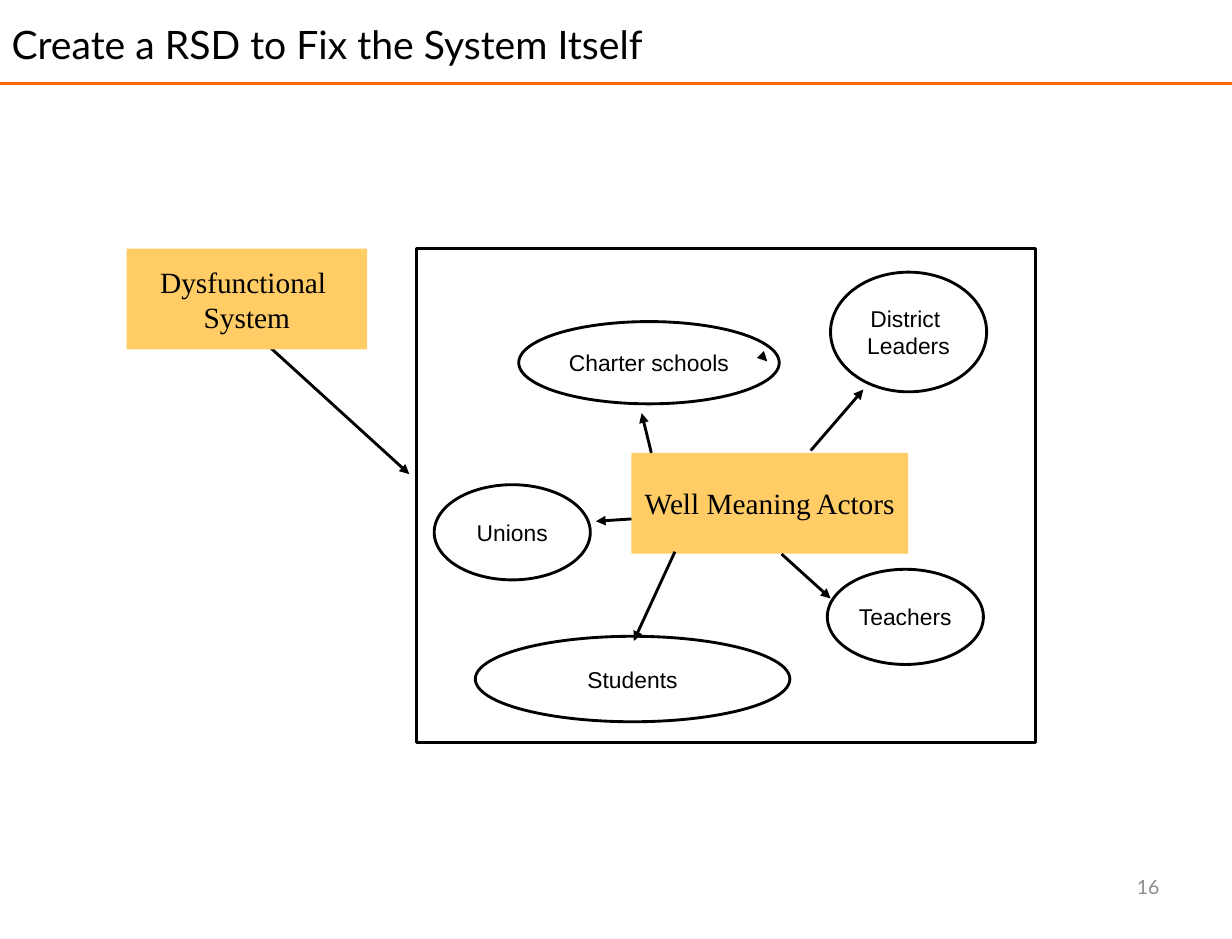
from dataclasses import dataclass

import pptx
import pptx.util
from lxml import etree
from pptx.dml.color import RGBColor
from pptx.enum.shapes import MSO_CONNECTOR, MSO_SHAPE
from pptx.enum.text import MSO_ANCHOR, PP_ALIGN
from pptx.oxml.ns import qn
from pptx.util import Cm

BLACK = RGBColor(0x00, 0x00, 0x00)
ORANGE = RGBColor(0xFF, 0x66, 0x00)
AMBER = RGBColor(0xFF, 0xCC, 0x66)
GREY = RGBColor(0x8C, 0x8C, 0x8C)
LINE_WIDTH = pptx.util.Pt(1.75)
HANGING = Cm(1.22)


@dataclass(frozen=True)
class Box:
    left: float
    top: float
    width: float
    height: float

    def lengths(self) -> tuple:
        return Cm(self.left), Cm(self.top), Cm(self.width), Cm(self.height)


@dataclass(frozen=True)
class TextStyle:
    font: str
    size: int
    color: RGBColor = BLACK


@dataclass(frozen=True)
class Node:
    box: Box
    lines: tuple[str, ...]


@dataclass(frozen=True)
class Arrow:
    x1: float
    y1: float
    x2: float
    y2: float


TITLE = TextStyle("Lato", 24)
PAGE_NUMBER = TextStyle("Lato", 12, GREY)
ACTOR = TextStyle("Arial", 14)
CONCEPT = TextStyle("Times New Roman", 18)

SYSTEM_FRAME = Node(Box(9.02, 5.38, 13.39, 10.69), ())
ACTORS = (
    Node(Box(9.4, 10.49, 3.38, 2.06), ("Unions",)),
    Node(Box(11.23, 6.96, 5.64, 1.78), ("Charter schools",)),
    Node(Box(17.98, 5.89, 3.38, 2.59), ("District ", "Leaders")),
    Node(Box(17.91, 12.32, 3.38, 2.06), ("Teachers",)),
    Node(Box(10.29, 13.77, 6.81, 1.85), ("Students",)),
)
WELL_MEANING = Node(Box(13.67, 9.8, 5.99, 2.18), ("Well Meaning Actors",))
DYSFUNCTIONAL = Node(Box(2.74, 5.38, 5.21, 2.18), ("Dysfunctional ", "System"))
ARROWS = (
    Arrow(16.59, 7.8, 16.61, 7.82),  # only the head shows, inside Charter schools
    Arrow(13.67, 11.23, 12.9, 11.28),
    Arrow(14.61, 11.94, 13.72, 13.87),
    Arrow(16.92, 11.99, 17.98, 12.95),
    Arrow(17.55, 9.75, 18.69, 8.43),
    Arrow(14.1, 9.8, 13.89, 8.94),
    Arrow(5.74, 7.42, 8.86, 10.26),
)


def add_run(paragraph, text: str, style: TextStyle) -> None:
    run = paragraph.add_run()
    run.text = text
    run.font.name = style.font
    run.font.size = pptx.util.Pt(style.size)
    run.font.color.rgb = style.color


def add_label(slide, box: Box, text: str, style: TextStyle,
              align: PP_ALIGN, anchor: MSO_ANCHOR) -> None:
    frame = slide.shapes.add_textbox(*box.lengths()).text_frame
    frame.word_wrap = True
    frame.vertical_anchor = anchor
    paragraph = frame.paragraphs[0]
    paragraph.alignment = align
    add_run(paragraph, text, style)


def add_node(slide, node: Node, preset: MSO_SHAPE, style: TextStyle,
             fill: RGBColor | None = None) -> None:
    """Draw a filled box without outline, or an outlined one without fill."""
    shape = slide.shapes.add_shape(preset, *node.box.lengths())
    shape.shadow.inherit = False
    if fill is None:
        shape.fill.background()
        shape.line.color.rgb = BLACK
        shape.line.width = LINE_WIDTH
    else:
        shape.fill.solid()
        shape.fill.fore_color.rgb = fill
        shape.line.fill.background()
    frame = shape.text_frame
    frame.word_wrap = False
    frame.vertical_anchor = MSO_ANCHOR.MIDDLE
    for index, line in enumerate(node.lines):
        paragraph = frame.add_paragraph() if index else frame.paragraphs[0]
        paragraph.alignment = PP_ALIGN.CENTER
        properties = paragraph._p.get_or_add_pPr()
        properties.set("marL", str(HANGING))
        properties.set("indent", str(-HANGING))
        add_run(paragraph, line, style)


def add_line(slide, arrow: Arrow, color: RGBColor, head: bool = True) -> None:
    connector = slide.shapes.add_connector(
        MSO_CONNECTOR.STRAIGHT,
        Cm(arrow.x1), Cm(arrow.y1), Cm(arrow.x2), Cm(arrow.y2))
    connector.line.color.rgb = color
    connector.line.width = LINE_WIDTH
    if head:
        outline = connector.line._get_or_add_ln()
        etree.SubElement(outline, qn("a:tailEnd"), type="triangle")
    etree.SubElement(connector._element.spPr, qn("a:effectLst"))


def main() -> None:
    deck = pptx.Presentation()
    deck.slide_width, deck.slide_height = Cm(26.67), Cm(20.32)
    slide = deck.slides.add_slide(deck.slide_layouts[6])

    add_line(slide, Arrow(0, 1.8, 26.67, 1.8), ORANGE, head=False)
    add_label(slide, Box(0, 0.08, 26.44, 1.73),
              "Create a RSD to Fix the System Itself", TITLE,
              PP_ALIGN.LEFT, MSO_ANCHOR.MIDDLE)
    add_label(slide, Box(19.13, 18.82, 6.22, 1.09), "16", PAGE_NUMBER,
              PP_ALIGN.RIGHT, MSO_ANCHOR.TOP)

    add_node(slide, SYSTEM_FRAME, MSO_SHAPE.RECTANGLE, ACTOR)
    for actor in ACTORS:
        add_node(slide, actor, MSO_SHAPE.OVAL, ACTOR)
    add_node(slide, WELL_MEANING, MSO_SHAPE.RECTANGLE, CONCEPT, AMBER)
    for arrow in ARROWS:
        add_line(slide, arrow, BLACK)
    add_node(slide, DYSFUNCTIONAL, MSO_SHAPE.RECTANGLE, CONCEPT, AMBER)

    deck.save("out.pptx")


if __name__ == "__main__":
    main()
